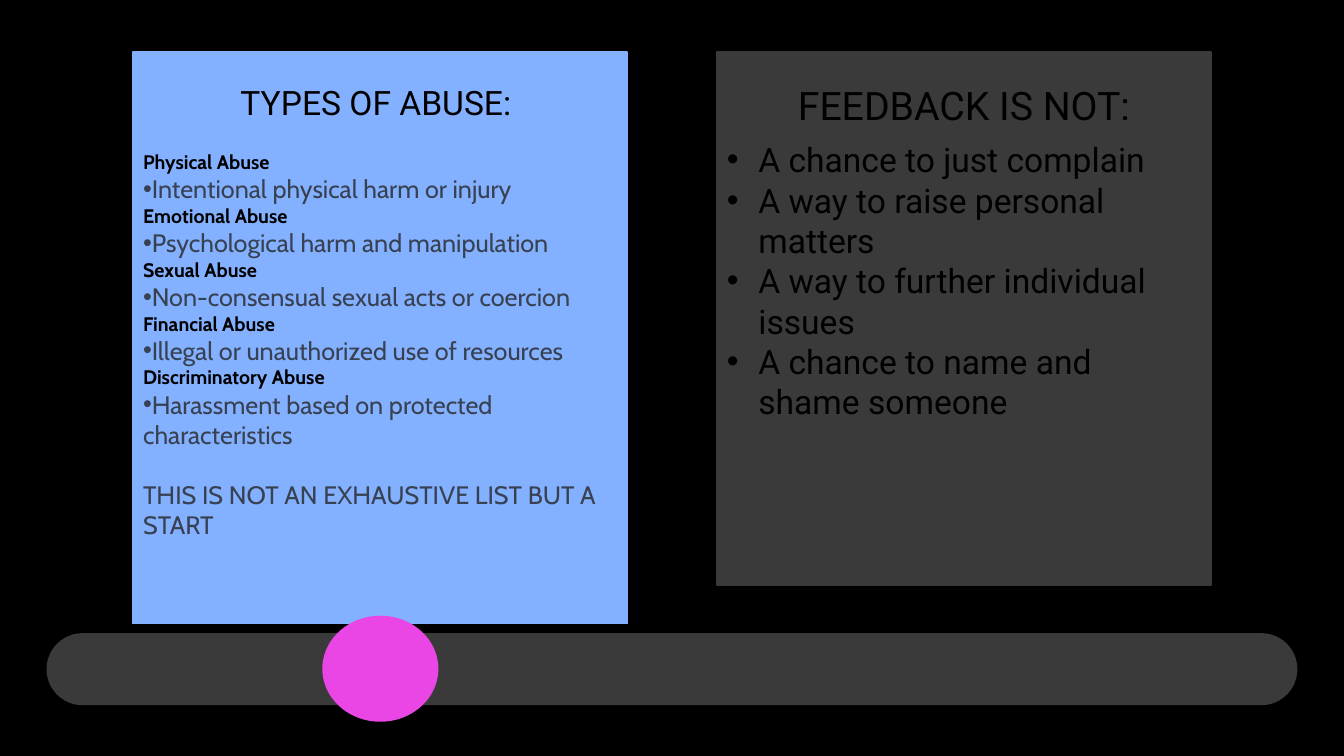
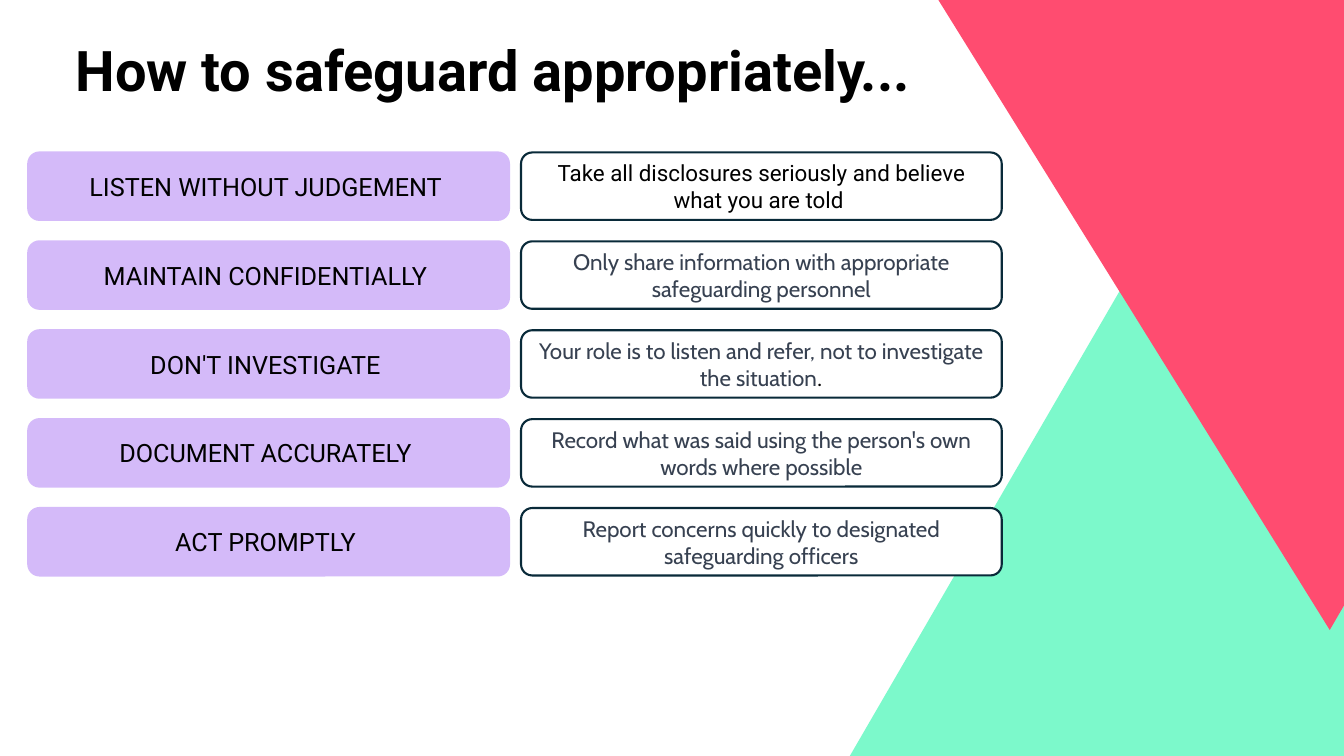
from dataclasses import dataclass

from lxml.etree import SubElement
from pptx import Presentation
from pptx.dml.color import RGBColor
from pptx.enum.shapes import MSO_SHAPE
from pptx.enum.text import MSO_ANCHOR, MSO_AUTO_SIZE, PP_ALIGN
from pptx.oxml.ns import qn
from pptx.shapes.base import BaseShape
from pptx.slide import Slide
from pptx.text.text import TextFrame, _Paragraph
from pptx.util import Pt

BLACK = RGBColor(0x00, 0x00, 0x00)
WHITE = RGBColor(0xFF, 0xFF, 0xFF)
GREY = RGBColor(0x3A, 0x3A, 0x3A)
SLATE = RGBColor(0x37, 0x41, 0x51)
NAVY = RGBColor(0x09, 0x2A, 0x39)
BLUE = RGBColor(0x83, 0xB0, 0xFF)
PINK = RGBColor(0xEA, 0x46, 0xE5)
LILAC = RGBColor(0xD4, 0xBA, 0xF9)
MINT = RGBColor(0x7C, 0xF9, 0xCB)
CORAL = RGBColor(0xFF, 0x4C, 0x70)

ROBOTO = "Roboto"
CABIN = "Cabin"


@dataclass(frozen=True)
class Box:
    left: float
    top: float
    width: float
    height: float


@dataclass(frozen=True)
class Abuse:
    name: str
    detail: str


@dataclass(frozen=True)
class Step:
    label: str
    advice: str
    font: str = CABIN
    color: RGBColor = SLATE
    stop: str = ""


ABUSES = [
    Abuse("Physical Abuse", "Intentional physical harm or injury"),
    Abuse("Emotional Abuse", "Psychological harm and manipulation"),
    Abuse("Sexual Abuse", "Non-consensual sexual acts or coercion"),
    Abuse("Financial Abuse", "Illegal or unauthorized use of resources"),
    Abuse("Discriminatory Abuse", "Harassment based on protected characteristics"),
]

LIMITS = [
    "A chance to just complain",
    "A way to raise personal matters",
    "A way to further individual issues",
    "A chance to name and shame someone",
]

STEPS = [
    Step("LISTEN WITHOUT JUDGEMENT ",
         "Take all disclosures seriously and believe what you are told ",
         ROBOTO, BLACK),
    Step("MAINTAIN CONFIDENTIALLY ",
         "Only share information with appropriate safeguarding personnel"),
    Step("DON'T INVESTIGATE ",
         "Your role is to listen and refer, not to investigate the situation",
         stop="."),
    Step("DOCUMENT ACCURATELY ",
         "Record what was said using the person's own words where possible"),
    Step("ACT PROMPTLY ",
         "Report concerns quickly to designated safeguarding officers"),
]


def place(shape: BaseShape, box: Box) -> None:
    shape.left, shape.top = Pt(box.left), Pt(box.top)
    shape.width, shape.height = Pt(box.width), Pt(box.height)


def paint(shape: BaseShape, fill: RGBColor, edge: RGBColor | None = None,
          weight: float = 1.5) -> None:
    shape.fill.solid()
    shape.fill.fore_color.rgb = fill
    if edge is None:
        shape.line.fill.background()
    else:
        shape.line.color.rgb = edge
        shape.line.width = Pt(weight)


def draw(slide: Slide, kind: MSO_SHAPE, box: Box, fill: RGBColor,
         edge: RGBColor | None = None, adjust: float | None = None) -> BaseShape:
    shape = slide.shapes.add_shape(kind, 0, 0, 0, 0)
    place(shape, box)
    shape.shadow.inherit = False
    paint(shape, fill, edge)
    if adjust is not None:
        shape.adjustments[0] = adjust
    return shape


def setup(frame: TextFrame, anchor: MSO_ANCHOR = MSO_ANCHOR.TOP) -> TextFrame:
    frame.auto_size = MSO_AUTO_SIZE.NONE
    frame.word_wrap = True
    frame.vertical_anchor = anchor
    return frame


def claim(slide: Slide, index: int, box: Box) -> BaseShape:
    """Move a placeholder into its box, in front of the shapes drawn so far."""
    holder = next(item for item in slide.placeholders
                  if item.placeholder_format.idx == index)
    holder.element.getparent().append(holder.element)
    place(holder, box)
    setup(holder.text_frame)
    return holder


def ink(para: _Paragraph, text: str, *, size: float, font: str = ROBOTO,
        color: RGBColor = BLACK, bold: bool = False) -> None:
    run = para.add_run()
    run.text = text
    run.font.size = Pt(size)
    run.font.name = font
    run.font.bold = bold
    run.font.color.rgb = color


def write(frame: TextFrame, text: str, *, align: PP_ALIGN = PP_ALIGN.LEFT,
          bullet: bool = False, indent: float = 0, before: float = 0,
          **style) -> _Paragraph:
    """Add one paragraph; style goes to its run."""
    para = frame.paragraphs[0]
    if para.runs:
        para = frame.add_paragraph()
    para.alignment = align
    para.space_before = Pt(before)
    props = para._p.get_or_add_pPr()
    props.set("marL", str(Pt(indent)))
    props.set("indent", str(-Pt(indent)))
    if bullet:
        SubElement(props, qn("a:buChar")).set("char", "•")
    else:
        SubElement(props, qn("a:buNone"))
    ink(para, text, **style)
    return para


def begin(deck: Presentation, layout: int, color: RGBColor) -> Slide:
    slide = deck.slides.add_slide(deck.slide_layouts[layout])
    slide.background.fill.solid()
    slide.background.fill.fore_color.rgb = color
    return slide


def compare(deck: Presentation) -> None:
    slide = begin(deck, 3, BLACK)
    left, right, width = 95, 512, 353
    draw(slide, MSO_SHAPE.ROUNDED_RECTANGLE, Box(34, 453, 892, 50), GREY, GREY, 0.5)
    for side, color in ((left, BLUE), (right, GREY)):
        draw(slide, MSO_SHAPE.RECTANGLE, Box(side, 37.2, width, 380.8), color, color)

    title = claim(slide, 0, Box(left, 54.7, width, 36))
    write(title.text_frame, "TYPES OF ABUSE: ", size=24, align=PP_ALIGN.CENTER)
    types = claim(slide, 1, Box(left, 103.7, width, 342))
    paint(types, BLUE, BLUE, 0.75)
    for abuse in ABUSES:
        write(types.text_frame, abuse.name, size=14, font=CABIN, bold=True)
        write(types.text_frame, abuse.detail, size=18, font=CABIN, color=SLATE,
              bullet=True)
    write(types.text_frame, "THIS IS NOT AN EXHAUSTIVE LIST BUT A START",
          size=18, font=CABIN, color=SLATE, before=21.6)

    head = slide.shapes.add_textbox(Pt(right), Pt(54.7), Pt(width), Pt(41))
    write(setup(head.text_frame), "FEEDBACK IS NOT:", size=28,
          align=PP_ALIGN.CENTER)
    limits = claim(slide, 2, Box(right, 95.8, width, 240))
    for limit in LIMITS:
        write(limits.text_frame, limit, size=24, bullet=True, indent=22.5)

    draw(slide, MSO_SHAPE.OVAL, Box(231, 440.6, 81.4, 74.2), PINK, PINK)


def guide(deck: Presentation) -> None:
    slide = begin(deck, 5, WHITE)
    kind = MSO_SHAPE.ISOSCELES_TRIANGLE
    draw(slide, kind, Box(607, 90, 540.7, 450), MINT, adjust=0.483)
    top = draw(slide, kind, Box(670.3, 0, 540.7, 450), CORAL, adjust=0.483)
    top.rotation = 180

    title = claim(slide, 0, Box(46.8, 21.6, 643.7, 55.4))
    write(title.text_frame, "How to safeguard appropriately...", size=40, bold=True)

    def card(left: float, row: int, fill: RGBColor, edge: RGBColor) -> TextFrame:
        box = Box(left, 108.9 + 63.5 * row, 343.4, 48.2)
        shape = draw(slide, MSO_SHAPE.ROUNDED_RECTANGLE, box, fill, edge)
        return setup(shape.text_frame, MSO_ANCHOR.MIDDLE)

    for row, step in enumerate(STEPS):
        write(card(20.2, row, LILAC, LILAC), step.label, size=18,
              align=PP_ALIGN.CENTER)
        para = write(card(372.2, row, WHITE, NAVY), step.advice, size=16,
                     font=step.font, color=step.color, align=PP_ALIGN.CENTER)
        if step.stop:
            ink(para, step.stop, size=16)


def main() -> None:
    deck = Presentation()
    deck.slide_width, deck.slide_height = Pt(960), Pt(540)
    compare(deck)
    guide(deck)
    deck.save("out.pptx")


if __name__ == "__main__":
    main()
